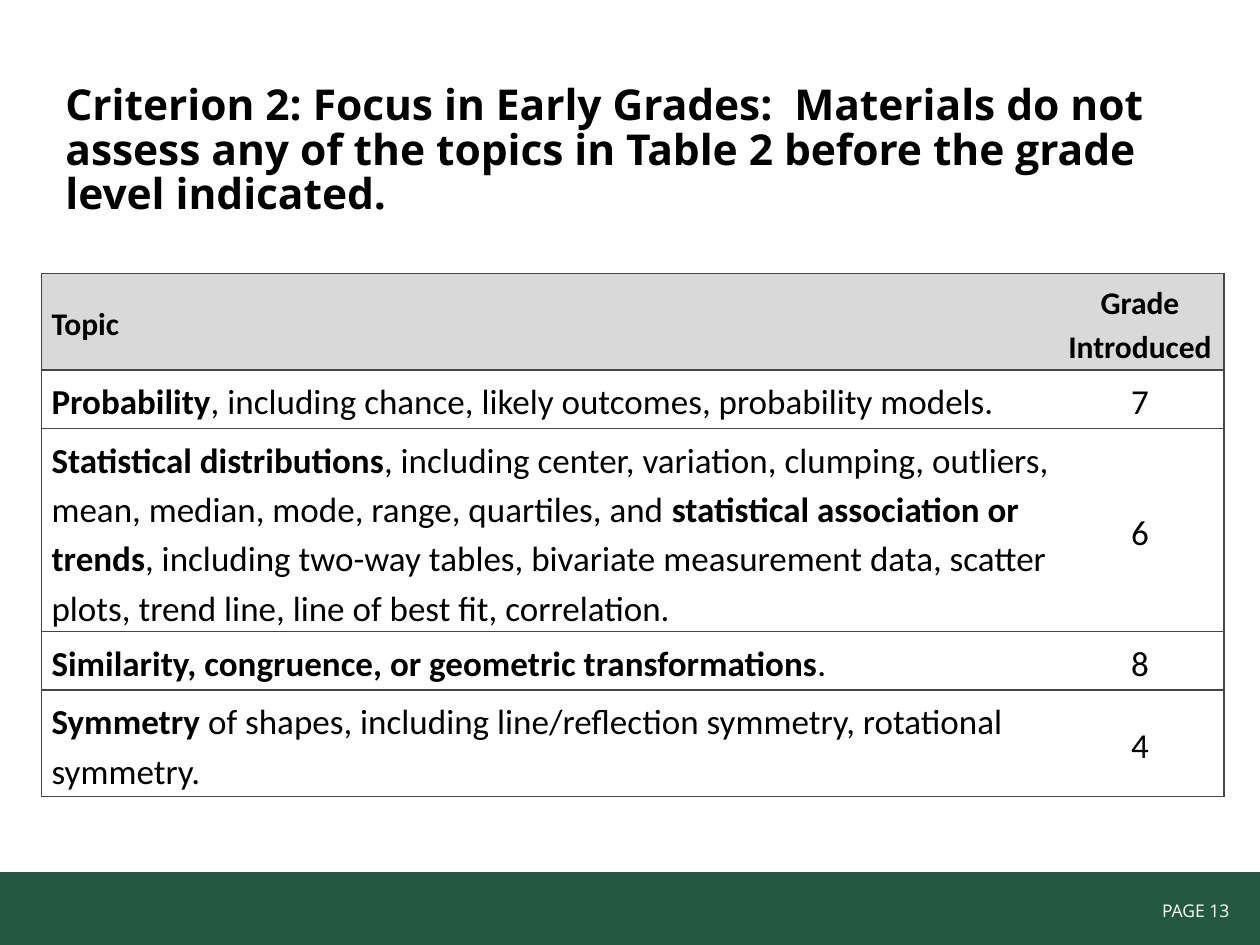
from dataclasses import dataclass

import pptx
import pptx.dml.color
import pptx.enum.shapes
import pptx.enum.text
import pptx.oxml
import pptx.oxml.ns
import pptx.util
from pptx.util import Cm

COLOURS = {"green": "23593E", "white": "FFFFFF", "black": "000000",
           "header": "D9D9D9", "border": "454645"}
ALIGN = pptx.enum.text.PP_ALIGN
ANCHOR = pptx.enum.text.MSO_ANCHOR


@dataclass
class Span:
    text: str
    bold: bool = False


@dataclass
class TopicRow:
    topic: list[Span]
    grade: str
    height: float
    size: int = 20
    header: bool = False


ROWS = [
    TopicRow([Span("Topic", True)], "Grade Introduced", 1.78, 18, True),
    TopicRow([Span("Probability", True),
              Span(", including chance, likely outcomes, probability models.")], "7", 1.07),
    TopicRow([Span("Statistical distributions", True),
              Span(", including center, variation, clumping, outliers, mean, median, "
                   "mode, range, quartiles, and "),
              Span("statistical association or trends", True),
              Span(", including two-way tables, bivariate measurement data, scatter "
                   "plots, trend line, line of best fit, correlation.")], "6", 4.01),
    TopicRow([Span("Similarity, congruence, or geometric transformations", True),
              Span(".")], "8", 1.07),
    TopicRow([Span("Symmetry", True),
              Span(" of shapes, including line/reflection symmetry, rotational symmetry.")],
             "4", 1.96),
]
COLUMN_WIDTHS = [20.45, 3.38]


def colour(name: str) -> pptx.dml.color.RGBColor:
    return pptx.dml.color.RGBColor.from_string(COLOURS[name])


def add_spans(para, spans: list[Span], size: float, font: str, shade: str = "black") -> None:
    for span in spans:
        run = para.add_run()
        run.text = span.text
        run.font.name = font
        run.font.size = pptx.util.Pt(size)
        run.font.bold = span.bold
        run.font.color.rgb = colour(shade)


def add_text(page, left: float, top: float, width: float, height: float,
             span: Span, size: float, shade: str, align=ALIGN.LEFT):
    box = page.shapes.add_textbox(Cm(left), Cm(top), Cm(width), Cm(height))
    box.text_frame.word_wrap = True
    para = box.text_frame.paragraphs[0]
    para.alignment = align
    add_spans(para, [span], size, "Open Sans", shade)
    return box


def set_borders(cell, open_side: str) -> None:
    properties = cell._tc.get_or_add_tcPr()
    for index, side in enumerate(("lnL", "lnR", "lnT", "lnB")):
        paint = ("<a:noFill/>" if side == open_side else
                 f'<a:solidFill><a:srgbClr val="{COLOURS["border"]}"/></a:solidFill>')
        line = pptx.oxml.parse_xml(
            f'<a:{side} {pptx.oxml.ns.nsdecls("a")} w="12700">{paint}</a:{side}>')
        properties.insert(index, line)


def fill_cell(cell, spans: list[Span], row: TopicRow, is_grade: bool) -> None:
    cell.vertical_anchor = ANCHOR.MIDDLE
    cell.margin_left = Cm(0.2)
    cell.margin_right = Cm(0.2 if is_grade or row.header else 0.05)
    cell.margin_top = cell.margin_bottom = Cm(0.1)
    if row.header:
        cell.fill.solid()
        cell.fill.fore_color.rgb = colour("header")
    else:
        cell.fill.background()
    para = cell.text_frame.paragraphs[0]
    para.alignment = ALIGN.CENTER if is_grade else ALIGN.LEFT
    para.line_spacing = 1.15
    add_spans(para, spans, row.size, "Calibri")
    set_borders(cell, "lnL" if is_grade else "lnR")


def add_topic_table(page) -> None:
    frame = page.shapes.add_table(len(ROWS), len(COLUMN_WIDTHS), Cm(0.84), Cm(5.51),
                                  Cm(sum(COLUMN_WIDTHS)), Cm(sum(row.height for row in ROWS)))
    table = frame.table
    table.first_row = table.horz_banding = False
    for column, width in zip(table.columns, COLUMN_WIDTHS):
        column.width = Cm(width)
    for index, row in enumerate(ROWS):
        table.rows[index].height = Cm(row.height)
        fill_cell(table.cell(index, 0), row.topic, row, False)
        fill_cell(table.cell(index, 1), [Span(row.grade, row.header)], row, True)


def main() -> None:
    deck = pptx.Presentation()
    deck.slide_width, deck.slide_height = Cm(25.4), Cm(19.05)
    page = deck.slides.add_slide(deck.slide_layouts[6])

    footer = page.shapes.add_shape(pptx.enum.shapes.MSO_SHAPE.RECTANGLE,
                                   Cm(0), Cm(17.58), Cm(25.4), Cm(1.47))
    footer.shadow.inherit = False
    footer.fill.solid()
    footer.fill.fore_color.rgb = colour("green")
    footer.line.fill.background()

    add_text(page, 21.03, 18.01, 4.0, 0.69, Span("PAGE 13"), 10, "white", ALIGN.RIGHT)
    title = add_text(page, 1.07, 1.7, 22.86, 4.01,
                     Span("Criterion 2: Focus in Early Grades:  Materials do not assess any "
                          "of the topics in Table 2 before the grade level indicated.", True),
                     24.3, "black")
    title.text_frame.margin_top = Cm(0)
    title.text_frame.paragraphs[0].line_spacing = 0.88
    add_topic_table(page)
    deck.save("out.pptx")


if __name__ == "__main__":
    main()
